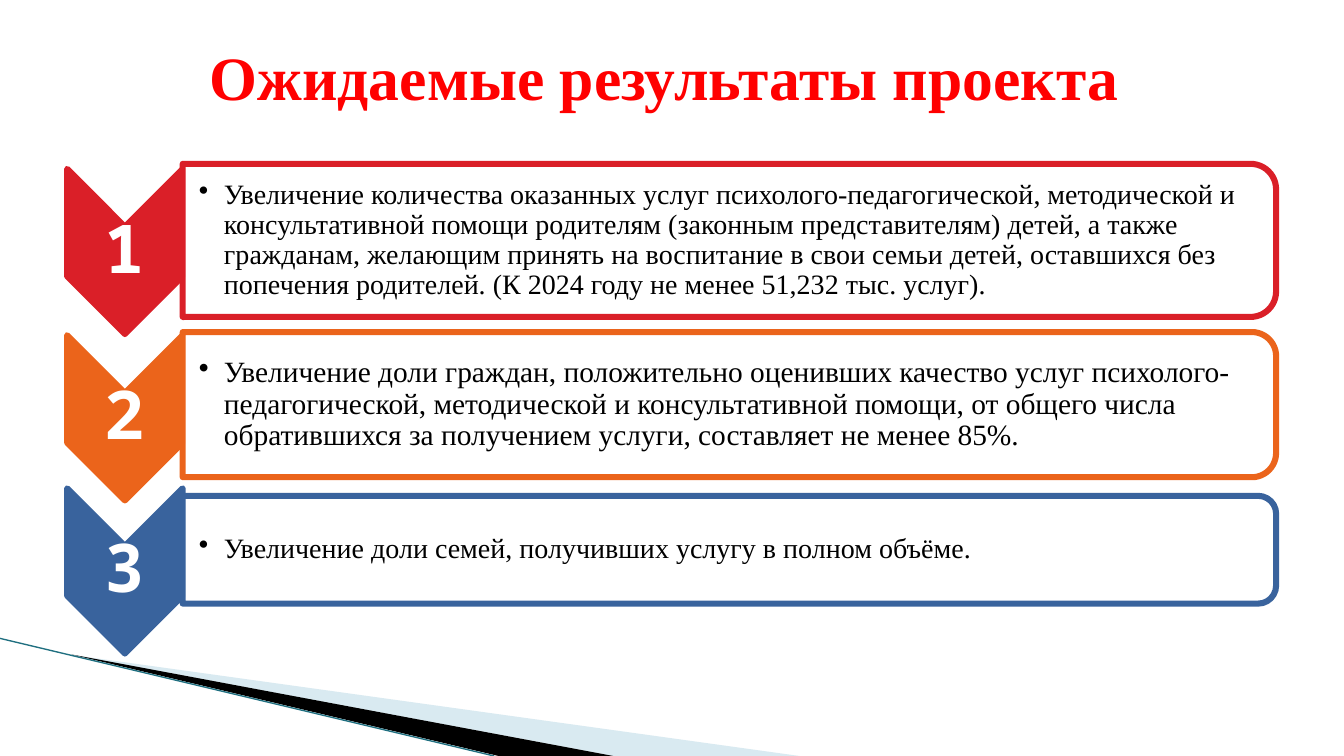
from dataclasses import dataclass

import pptx
import pptx.dml.color
import pptx.enum.shapes
import pptx.enum.text
import pptx.oxml
import pptx.oxml.ns
import pptx.util

Pt = pptx.util.Pt
SHAPES = pptx.enum.shapes.MSO_SHAPE
ALIGN = pptx.enum.text.PP_ALIGN


@dataclass(frozen=True)
class Theme:
    title_color: str = "FF0000"
    text_color: str = "000000"
    paper: str = "FFFFFF"
    pale_ribbon: str = "A0CBDC"
    dark_ribbon: str = "000000"
    ribbon_edge: str = "1F6F80"
    text_font: str = "Times New Roman"
    number_font: str = "Noto Sans Mono"
    title_size: float = 44
    number_size: float = 48
    outline: float = 4.33
    edge: float = 0.95


THEME = Theme()

# Result rows: colour, chevron top, panel top, panel height, text size, text
RESULTS = [
    ("DA1F28", 120.6, 117, 109.4, 20,
     "Увеличение количества оказанных услуг психолого-педагогической, методической и "
     "консультативной помощи родителям (законным представителям) детей, а также гражданам, "
     "желающим принять на воспитание в свои семьи детей, оставшихся без попечения родителей. "
     "(К 2024 году не менее 51,232 тыс. услуг)."),
    ("EB641B", 239.4, 237.2, 103.7, 21,
     "Увеличение доли граждан, положительно оценивших качество услуг психолого-педагогической, "
     "методической и консультативной помощи, от общего числа обратившихся за получением услуги, "
     "составляет не менее 85%."),
    ("39639D", 348.8, 354.2, 77, 20,
     "Увеличение доли семей, получивших услугу в полном объёме."),
]
CHEVRON_LEFT, CHEVRON_WIDTH, CHEVRON_HEIGHT = 47.9, 82.6, 118
PANEL_LEFT, PANEL_WIDTH = 130.5, 781
NUMBER_HEIGHT = 35.3


def rgb(value):
    return pptx.dml.color.RGBColor.from_string(value)


def add_xml(parent, tag, **attributes):
    element = pptx.oxml.parse_xml(f'<a:{tag} {pptx.oxml.ns.nsdecls("a")}/>')
    for key, value in attributes.items():
        element.set(key, value)
    parent.append(element)


def paint(shape, fill, opacity=100, line=None):
    shape.shadow.inherit = False
    shape.fill.solid()
    shape.fill.fore_color.rgb = rgb(fill)
    if opacity < 100:
        color = shape.fill._xPr.find(".//" + pptx.oxml.ns.qn("a:srgbClr"))
        add_xml(color, "alpha", val=str(opacity * 1000))
    if line:
        shape.line.color.rgb = rgb(line)
        shape.line.width = Pt(THEME.outline)
    else:
        shape.line.fill.background()


def add_upturned(slide, preset, left, top, width, height):
    """Add a shape turned by 90 degrees that fills the given visible box."""
    shift = (width - height) / 2
    shape = slide.shapes.add_shape(
        preset, Pt(left + shift), Pt(top - shift), Pt(height), Pt(width))
    shape.rotation = 90
    return shape


def add_text(slide, box, text, font, size, color, bold=False, align=ALIGN.LEFT,
             insets=(7.2, 3.6, 7.2, 3.6), indent=(0, 0), bullet=None, spacing=None):
    frame = slide.shapes.add_textbox(*map(Pt, box)).text_frame
    frame.word_wrap = True
    frame.vertical_anchor = pptx.enum.text.MSO_ANCHOR.MIDDLE
    (frame.margin_left, frame.margin_top,
     frame.margin_right, frame.margin_bottom) = map(Pt, insets)
    paragraph = frame.paragraphs[0]
    paragraph.text = text
    paragraph.alignment = align
    if spacing:
        paragraph.line_spacing = spacing
    properties = paragraph._p.get_or_add_pPr()
    margin, first_line = indent
    properties.set("marL", str(Pt(margin)))
    properties.set("indent", str(Pt(first_line)))
    if bullet:
        add_xml(properties, "buChar", char=bullet)
    paragraph.font.name = font
    paragraph.font.size = Pt(size)
    paragraph.font.bold = bold
    paragraph.font.color.rgb = rgb(color)


def add_ribbon(slide, points, fill, opacity=100):
    corners = [(Pt(x), Pt(y)) for x, y in points]
    outline = slide.shapes.build_freeform(*corners[0])
    outline.add_line_segments(corners[1:])
    paint(outline.convert_to_shape(), fill, opacity)


def add_ribbon_edge(slide, start, end):
    edge = slide.shapes.add_connector(
        pptx.enum.shapes.MSO_CONNECTOR.STRAIGHT, *map(Pt, start + end))
    edge.line.color.rgb = rgb(THEME.ribbon_edge)
    edge.line.width = Pt(THEME.edge)
    add_xml(edge._element.spPr, "effectLst")


def add_result(slide, number, color, chevron_top, panel_top, panel_height, size, text):
    # Numbered chevron
    chevron = add_upturned(slide, SHAPES.CHEVRON, CHEVRON_LEFT, chevron_top,
                           CHEVRON_WIDTH, CHEVRON_HEIGHT)
    paint(chevron, color, line=color)
    number_top = chevron_top + (CHEVRON_HEIGHT - NUMBER_HEIGHT) / 2
    add_text(slide, (CHEVRON_LEFT, number_top, CHEVRON_WIDTH, NUMBER_HEIGHT), str(number),
             THEME.number_font, THEME.number_size, THEME.paper, bold=True,
             align=ALIGN.CENTER, insets=(2.2,) * 4, spacing=0.9)

    # Panel with the expected result
    panel = add_upturned(slide, SHAPES.ROUND_2_SAME_RECTANGLE, PANEL_LEFT, panel_top,
                         PANEL_WIDTH, panel_height)
    paint(panel, THEME.paper, opacity=90, line=color)
    add_text(slide, (PANEL_LEFT, panel_top + 5, PANEL_WIDTH - 5, panel_height - 10), text,
             THEME.text_font, size, THEME.text_color, insets=(11.5, 0.9, 0.9, 0.9),
             indent=(18, -18), bullet="•", spacing=0.9)


def main():
    deck = pptx.Presentation()
    deck.slide_width, deck.slide_height = Pt(960), Pt(540)
    slide = deck.slides.add_slide(deck.slide_layouts[6])

    # Corner ribbons
    add_ribbon(slide, [(52.5, 468), (571, 540), (438, 540)], THEME.pale_ribbon, opacity=40)
    add_ribbon(slide, [(51, 467.5), (438, 540), (356, 540)], THEME.dark_ribbon)
    add_ribbon_edge(slide, (0, 456), (353, 540))

    # Expected results
    for number, result in enumerate(RESULTS, start=1):
        add_result(slide, number, *result)

    # Title
    add_text(slide, (66, 29, 828, 51), "Ожидаемые результаты проекта", THEME.text_font,
             THEME.title_size, THEME.title_color, bold=True, indent=(76.3, 0))

    deck.save("out.pptx")


if __name__ == "__main__":
    main()
